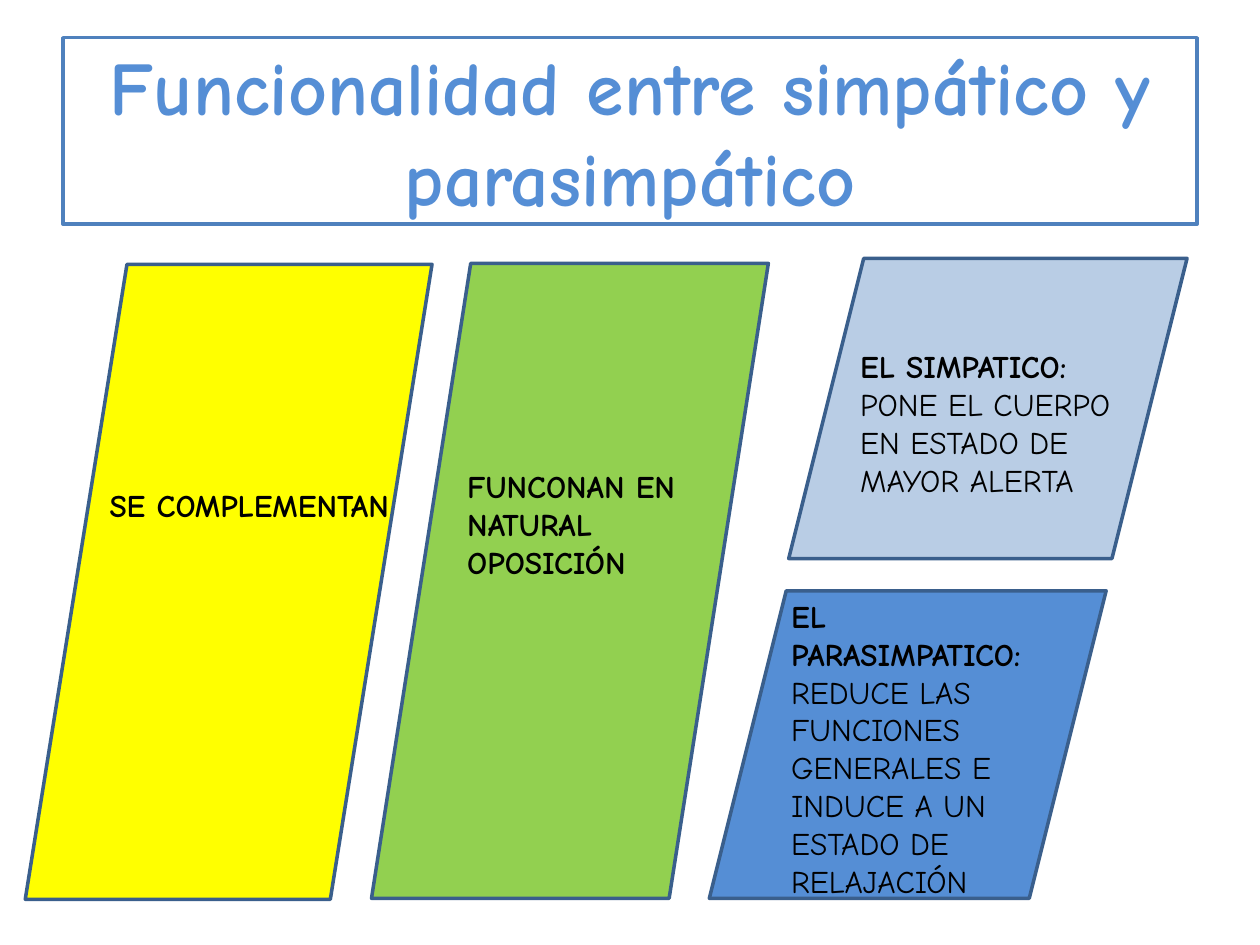
import dataclasses

import pptx
import pptx.dml.color
import pptx.enum.shapes
import pptx.enum.text
import pptx.util

Cm = pptx.util.Cm
Pt = pptx.util.Pt


@dataclasses.dataclass(frozen=True)
class Theme:
    font: str = "Comic Neue"
    title_size: float = 43.2
    body_size: float = 18
    line_width: float = 2
    white: str = "FFFFFF"
    black: str = "000000"
    blue: str = "558ED5"
    light_blue: str = "B9CDE5"
    yellow: str = "FFFF00"
    green: str = "92D050"
    title_line: str = "4F81BD"
    panel_line: str = "3A5F8C"


@dataclasses.dataclass(frozen=True)
class Box:
    """Position and size in centimetres."""
    left: float
    top: float
    width: float
    height: float

    def lengths(self) -> tuple:
        return tuple(Cm(value) for value in dataclasses.astuple(self))


@dataclasses.dataclass(frozen=True)
class Panel:
    box: Box
    fill: str
    text_box: Box
    heading: tuple[str, ...]
    body: tuple[str, ...] = ()


THEME = Theme()
CAPTION_WIDTH = 6.43
TITLE_BOX = Box(1.27, 0.76, 22.86, 3.76)

PANELS = (
    Panel(Box(0.51, 5.33, 8.2, 12.8), THEME.yellow,
          Box(1.96, 9.68, CAPTION_WIDTH, 1.8),
          ("SE COMPLEMENTAN",)),
    Panel(Box(7.49, 5.31, 8, 12.8), THEME.green,
          Box(9.17, 9.3, CAPTION_WIDTH, 2.57),
          ("FUNCONAN EN", "NATURAL", "OPOSICIÓN")),
    Panel(Box(15.9, 5.21, 8.03, 6.05), THEME.light_blue,
          Box(17.09, 6.88, CAPTION_WIDTH, 3.33),
          ("EL SIMPATICO:",),
          ("PONE EL CUERPO", "EN ESTADO DE", "MAYOR ALERTA")),
    Panel(Box(14.3, 11.91, 8, 6.2), THEME.blue,
          Box(15.7, 11.91, CAPTION_WIDTH, 6.4),
          ("EL", "PARASIMPATICO:"),
          ("REDUCE LAS", "FUNCIONES", "GENERALES E",
           "INDUCE A UN ESTADO DE RELAJACIÓN")),
)


def color(value: str) -> pptx.dml.color.RGBColor:
    return pptx.dml.color.RGBColor.from_string(value)


def write(para, text: str, *, size: float = THEME.body_size,
          ink: str = THEME.black, bold: bool = False,
          align=pptx.enum.text.PP_ALIGN.LEFT) -> None:
    para.alignment = align
    span = para.add_run()
    span.text = text
    span.font.name = THEME.font
    span.font.size = Pt(size)
    span.font.bold = bold
    span.font.color.rgb = color(ink)


def paint(shape, fill: str, line: str) -> None:
    shape.fill.solid()
    shape.fill.fore_color.rgb = color(fill)
    shape.line.color.rgb = color(line)
    shape.line.width = Pt(THEME.line_width)


def draw_title(page, text: str) -> None:
    title = page.shapes.title
    title.left, title.top, title.width, title.height = TITLE_BOX.lengths()
    paint(title, THEME.white, THEME.title_line)
    frame = title.text_frame
    frame.word_wrap = True
    frame.auto_size = pptx.enum.text.MSO_AUTO_SIZE.NONE
    frame.vertical_anchor = pptx.enum.text.MSO_ANCHOR.MIDDLE
    write(frame.paragraphs[0], text, size=THEME.title_size, ink=THEME.blue,
          bold=True, align=pptx.enum.text.PP_ALIGN.CENTER)


def draw_panel(page, panel: Panel) -> None:
    shape = page.shapes.add_shape(
        pptx.enum.shapes.MSO_SHAPE.PARALLELOGRAM, *panel.box.lengths())
    shape.shadow.inherit = False
    paint(shape, panel.fill, THEME.panel_line)


def draw_caption(page, panel: Panel) -> None:
    frame = page.shapes.add_textbox(*panel.text_box.lengths()).text_frame
    frame.word_wrap = True
    for index, text in enumerate(panel.heading + panel.body):
        para = frame.add_paragraph() if index else frame.paragraphs[0]
        write(para, text, bold=index < len(panel.heading))


def main() -> None:
    deck = pptx.Presentation()
    deck.slide_width, deck.slide_height = Cm(25.4), Cm(19.05)
    title_only = deck.slide_layouts[5]
    page = deck.slides.add_slide(title_only)

    draw_title(page, "Funcionalidad entre simpático y parasimpático")

    # Coloured panels lie behind all captions
    for panel in PANELS:
        draw_panel(page, panel)
    for panel in PANELS:
        draw_caption(page, panel)

    deck.save("out.pptx")


if __name__ == "__main__":
    main()
